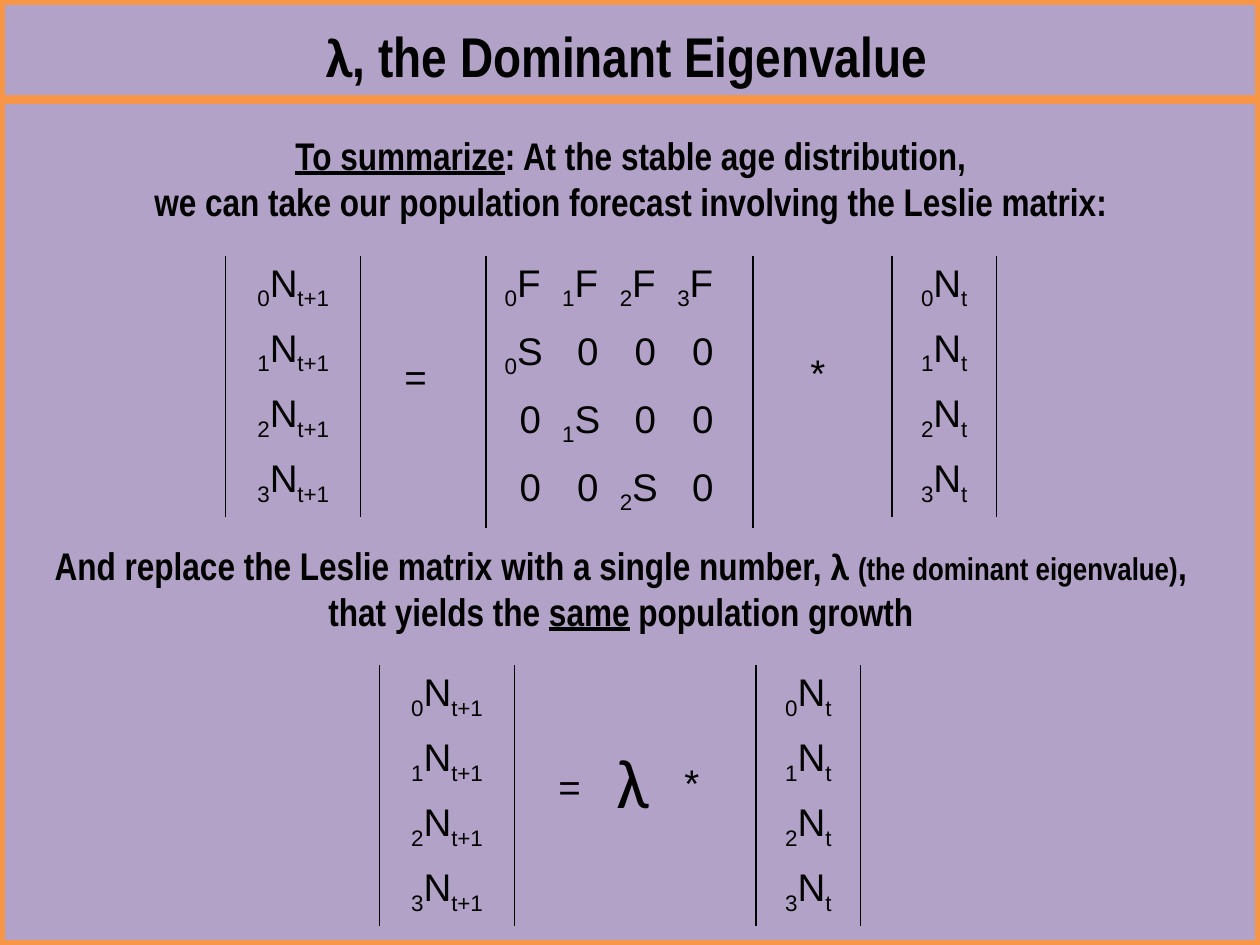
from lxml.etree import SubElement
from pptx import Presentation
from pptx.dml.color import RGBColor
from pptx.enum.shapes import MSO_CONNECTOR, MSO_SHAPE
from pptx.enum.text import PP_ALIGN
from pptx.oxml import parse_xml
from pptx.oxml.ns import nsdecls, qn
from pptx.util import Cm, Pt

LAVENDER = RGBColor(0xB3, 0xA2, 0xC7)
ORANGE = RGBColor(0xF7, 0x96, 0x46)
BLACK = RGBColor(0, 0, 0)

PLAIN_TABLE_STYLE = "{2D5ABB26-0587-4C30-8999-92F81FD0307C}"
SUB = {"subscript": True}
UNDERLINED = {"underline": True}
GREEK = {"font": "Calibri"}

AGES = range(4)
VECTOR_ROW = 1.24
LESLIE_ROW = 1.37
LESLIE_STEP = 1.16
LESLIE_START = 0.12
ZERO_SHIFT = 0.3


def write(paragraph, runs, *, font="Arial", size=22, bold=False,
          underline=False, subscript=False, align=None):
    """Add (text, overrides) runs; the keywords are the shared format."""
    paragraph.alignment = align
    base = dict(font=font, size=size, bold=bold,
                underline=underline, subscript=subscript)
    for text, overrides in runs:
        style = {**base, **overrides}
        run = paragraph.add_run()
        run.text = text
        run.font.name = style["font"]
        run.font.size = Pt(style["size"])
        run.font.bold = style["bold"]
        run.font.underline = style["underline"]
        run.font.color.rgb = BLACK
        if style["subscript"]:
            run._r.get_or_add_rPr().set("baseline", "-25000")


def add_text(slide, left, top, width, height, lines, **style):
    box = slide.shapes.add_textbox(Cm(left), Cm(top), Cm(width), Cm(height))
    frame = box.text_frame
    frame.word_wrap = True
    for index, runs in enumerate(lines):
        paragraph = frame.add_paragraph() if index else frame.paragraphs[0]
        write(paragraph, runs, align=PP_ALIGN.CENTER, **style)


def add_frame(slide, width, height):
    border = slide.shapes.add_shape(MSO_SHAPE.RECTANGLE, 0, 0, width, height)
    border.shadow.inherit = False
    border.fill.background()
    border.line.color.rgb = ORANGE
    border.line.width = Pt(6)

    title_rule = slide.shapes.add_connector(
        MSO_CONNECTOR.STRAIGHT, 0, Cm(2.01), width, Cm(2.01))
    title_rule.line.color.rgb = ORANGE
    title_rule.line.width = Pt(5)
    SubElement(title_rule._element.spPr, qn("a:effectLst"))


def add_side_bars(cell):
    properties = cell._tc.get_or_add_tcPr()
    for index, side in enumerate(("lnL", "lnR")):
        properties.insert(index, parse_xml(
            f'<a:{side} {nsdecls("a")} w="12700"><a:solidFill>'
            f'<a:srgbClr val="{BLACK}"/></a:solidFill></a:{side}>'))


def set_tabs(paragraph, stops):
    tab_list = SubElement(paragraph._p.get_or_add_pPr(), qn("a:tabLst"))
    for stop in stops:
        SubElement(tab_list, qn("a:tab"), pos=str(Cm(stop)), algn="l")


def add_column(slide, left, top, width, row_height, rows, *,
               bars=True, tabs=None, align=None):
    """Add a one-column table, with bars at its sides for a matrix."""
    table = slide.shapes.add_table(
        len(rows), 1, Cm(left), Cm(top), Cm(width),
        Cm(row_height * len(rows))).table
    table.first_row = table.horz_banding = False
    table._tbl.tblPr.find(qn("a:tableStyleId")).text = PLAIN_TABLE_STYLE
    for index, runs in enumerate(rows):
        cell = table.cell(index, 0)
        cell.fill.background()
        if bars:
            add_side_bars(cell)
        paragraph = cell.text_frame.paragraphs[0]
        if tabs:
            set_tabs(paragraph, tabs[index])
        write(paragraph, runs, align=align)


def add_vector(slide, left, top, width, time):
    rows = [[(str(age), SUB), ("N", {}), (time, SUB)] for age in AGES]
    add_column(slide, left, top, width, VECTOR_ROW, rows,
               align=PP_ALIGN.CENTER)


def add_operator(slide, left, top, width, sign):
    add_column(slide, left, top, width, 1.27, [[(sign, {})]], bars=False)


def add_leslie_matrix(slide, left, top):
    """Fecundities fill the first row, survivals the subdiagonal."""
    rows, tabs = [], []
    for row in AGES:
        runs, stops = [], []
        for column in AGES:
            stop = LESLIE_START + column * LESLIE_STEP
            if row == 0 or column == row - 1:
                runs += [("\t", {}), (str(column), SUB),
                         ("S" if row else "F", {})]
            else:
                stop += ZERO_SHIFT
                runs.append(("\t0", {}))
            stops.append(stop)
        rows.append(runs)
        tabs.append(stops)
    add_column(slide, left, top, 5.38, LESLIE_ROW, rows, tabs=tabs)


def main():
    deck = Presentation()
    deck.slide_width, deck.slide_height = Cm(25.4), Cm(19.05)
    slide = deck.slides.add_slide(deck.slide_layouts[6])
    slide.background.fill.solid()
    slide.background.fill.fore_color.rgb = LAVENDER
    add_frame(slide, deck.slide_width, deck.slide_height)

    heading = dict(font="Arial Narrow", bold=True)
    add_text(slide, 1.88, 0.3, 21.51, 1.62,
             [[("λ", GREEK), (", the Dominant Eigenvalue", {})]],
             size=32, **heading)
    add_text(slide, 0.84, 2.54, 23.75, 2.13, [
        [("To summarize", UNDERLINED),
         (": At the stable age distribution,", {})],
        [("we can take our population forecast involving "
          "the Leslie matrix:", {})],
    ], **heading)

    add_vector(slide, 4.55, 5.16, 2.72, "t+1")
    add_operator(slide, 7.9, 7.06, 0.64, "=")
    add_leslie_matrix(slide, 9.8, 5.16)
    add_operator(slide, 16.08, 6.98, 0.84, "*")
    add_vector(slide, 17.98, 5.16, 2.11, "t")

    add_text(slide, 0.64, 10.8, 23.75, 2.13, [
        [("And replace the Leslie matrix with a single number, ", {}),
         ("λ ", GREEK), ("(the dominant eigenvalue)", {"size": 18}),
         (",", {})],
        [("that yields the ", {}), ("same", UNDERLINED),
         (" population growth", {})],
    ], **heading)

    add_vector(slide, 7.65, 13.41, 2.72, "t+1")
    add_operator(slide, 11, 15.32, 0.64, "=")
    add_text(slide, 11.53, 14.76, 2.44, 1.96, [[("λ", GREEK)]], size=40)
    add_operator(slide, 13.54, 15.24, 0.84, "*")
    add_vector(slide, 15.24, 13.41, 2.11, "t")

    deck.save("out.pptx")


if __name__ == "__main__":
    main()
